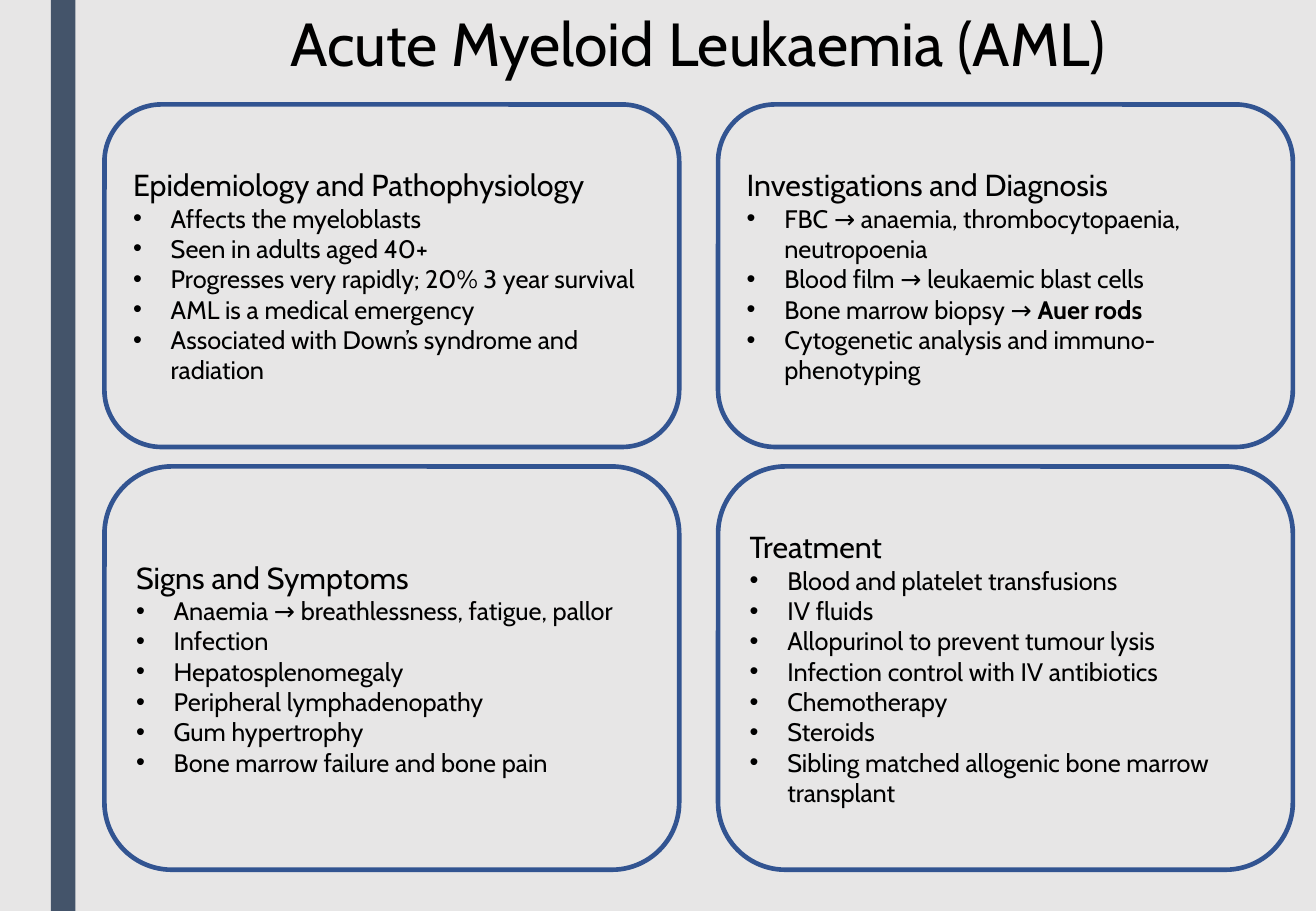
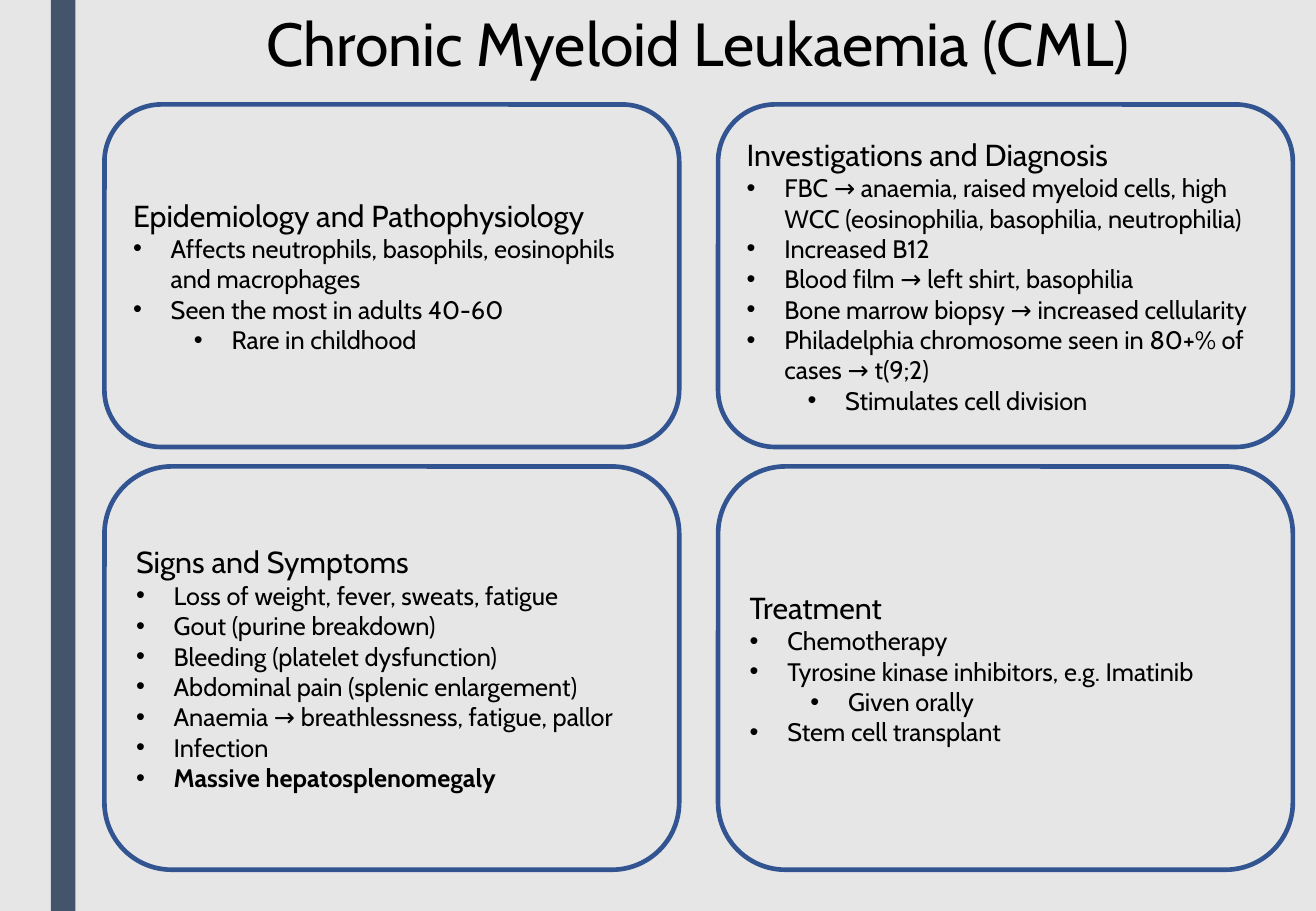
from dataclasses import dataclass

from lxml.etree import SubElement
from pptx import Presentation
from pptx.dml.color import RGBColor
from pptx.enum.shapes import MSO_SHAPE
from pptx.enum.text import MSO_ANCHOR, MSO_AUTO_SIZE, PP_ALIGN
from pptx.oxml.ns import qn
from pptx.slide import Slide
from pptx.text.text import TextFrame, _Paragraph
from pptx.util import Inches, Pt

COLORS = {"background": "E7E6E6", "band": "44546A", "outline": "325491", "text": "000000"}
FORMATS = {
    "title": {"name": "Cabin", "size": Pt(36)},
    "heading": {"name": "Cabin", "size": Pt(18)},
    "body": {"name": "Cabin", "size": Pt(15)},
}
SLIDE_WIDTH, SLIDE_HEIGHT = Inches(10.83), Inches(7.5)
PANEL_WIDTH = Inches(4.73)
COLUMN_LEFTS = (Inches(0.86), Inches(5.91))
ROW_HEIGHTS = (Inches(2.82), Inches(3.32))
ROW_GAP = Inches(0.16)
ROW_TOPS = (Inches(0.86), Inches(0.86) + ROW_HEIGHTS[0] + ROW_GAP)
BULLET_HANG, LEVEL_STEP = Inches(0.31), Inches(0.5)


@dataclass(frozen=True)
class Point:
    """A bullet; text between ** marks is bold."""
    text: str
    level: int = 0


@dataclass(frozen=True)
class Section:
    heading: str
    row: int
    column: int


@dataclass(frozen=True)
class Disease:
    """A slide title and the points of each section, in SECTIONS order."""
    title: str
    points: tuple[tuple[Point, ...], ...]


SECTIONS = (
    Section("Epidemiology and Pathophysiology", 0, 0),
    Section("Treatment", 1, 1),
    Section("Signs and Symptoms", 1, 0),
    Section("Investigations and Diagnosis", 0, 1),
)

DISEASES = (
    Disease("Acute Myeloid Leukaemia (AML)", (
        (
            Point("Affects the myeloblasts"),
            Point("Seen in adults aged 40+"),
            Point("Progresses very rapidly; 20% 3 year survival"),
            Point("AML is a medical emergency"),
            Point("Associated with Down’s syndrome and radiation"),
        ),
        (
            Point("Blood and platelet transfusions"),
            Point("IV fluids"),
            Point("Allopurinol to prevent tumour lysis"),
            Point("Infection control with IV antibiotics"),
            Point("Chemotherapy"),
            Point("Steroids"),
            Point("Sibling matched allogenic bone marrow transplant"),
        ),
        (
            Point("Anaemia → breathlessness, fatigue, pallor"),
            Point("Infection"),
            Point("Hepatosplenomegaly"),
            Point("Peripheral lymphadenopathy"),
            Point("Gum hypertrophy"),
            Point("Bone marrow failure and bone pain"),
        ),
        (
            Point("FBC → anaemia, thrombocytopaenia, neutropoenia"),
            Point("Blood film → leukaemic blast cells"),
            Point("Bone marrow biopsy → **Auer rods**"),
            Point("Cytogenetic analysis and immuno-phenotyping"),
        ),
    )),
    Disease("Chronic Myeloid Leukaemia (CML)", (
        (
            Point("Affects neutrophils, basophils, eosinophils and macrophages"),
            Point("Seen the most in adults 40-60"),
            Point("Rare in childhood", level=1),
        ),
        (
            Point("Chemotherapy"),
            Point("Tyrosine kinase inhibitors, e.g. Imatinib"),
            Point("Given orally", level=1),
            Point("Stem cell transplant"),
        ),
        (
            Point("Loss of weight, fever, sweats, fatigue"),
            Point("Gout (purine breakdown)"),
            Point("Bleeding (platelet dysfunction)"),
            Point("Abdominal pain (splenic enlargement)"),
            Point("Anaemia → breathlessness, fatigue, pallor"),
            Point("Infection"),
            Point("**Massive hepatosplenomegaly**"),
        ),
        (
            Point("FBC → anaemia, raised myeloid cells, high WCC "
                  "(eosinophilia, basophilia, neutrophilia)"),
            Point("Increased B12"),
            Point("Blood film → left shirt, basophilia"),
            Point("Bone marrow biopsy → increased cellularity"),
            Point("Philadelphia chromosome seen in 80+% of cases → t(9;2)"),
            Point("Stimulates cell division", level=1),
        ),
    )),
)


def color(role: str) -> RGBColor:
    return RGBColor.from_string(COLORS[role])


def write(paragraph: _Paragraph, text: str, style: str, alignment: PP_ALIGN) -> None:
    """Add text in a named format, with every second part between ** marks bold."""
    paragraph.alignment = alignment
    for index, part in enumerate(text.split("**")):
        if not part:
            continue
        run = paragraph.add_run()
        run.text = part
        run.font.color.rgb = color("text")
        for attribute, value in {**FORMATS[style], "bold": index % 2 == 1}.items():
            setattr(run.font, attribute, value)


def add_bullet(frame: TextFrame, point: Point) -> None:
    paragraph = frame.add_paragraph()
    paragraph.level = point.level
    write(paragraph, point.text, "body", PP_ALIGN.LEFT)
    properties = paragraph._p.get_or_add_pPr()
    properties.set("marL", str(BULLET_HANG + point.level * LEVEL_STEP))
    properties.set("indent", str(-BULLET_HANG))
    SubElement(properties, qn("a:buFont"), typeface="Arial")
    SubElement(properties, qn("a:buChar"), char="•")


def add_band(slide: Slide) -> None:
    band = slide.shapes.add_shape(
        MSO_SHAPE.RECTANGLE, Inches(0.42), 0, Inches(0.2), SLIDE_HEIGHT)
    band.shadow.inherit = False
    band.fill.solid()
    band.fill.fore_color.rgb = color("band")
    band.line.fill.background()


def add_title(slide: Slide, title: str) -> None:
    frame = slide.shapes.add_textbox(
        Inches(0.66), 0, Inches(10.17), Inches(0.71)).text_frame
    frame.word_wrap = True
    frame.auto_size = MSO_AUTO_SIZE.SHAPE_TO_FIT_TEXT
    write(frame.paragraphs[0], title, "title", PP_ALIGN.CENTER)


def add_panel(slide: Slide, section: Section, points: tuple[Point, ...]) -> None:
    panel = slide.shapes.add_shape(
        MSO_SHAPE.ROUNDED_RECTANGLE, COLUMN_LEFTS[section.column],
        ROW_TOPS[section.row], PANEL_WIDTH, ROW_HEIGHTS[section.row])
    panel.shadow.inherit = False
    panel.fill.background()
    panel.line.color.rgb = color("outline")
    panel.line.width = Pt(2.75)
    frame = panel.text_frame
    frame.word_wrap = True
    frame.vertical_anchor = MSO_ANCHOR.MIDDLE
    write(frame.paragraphs[0], section.heading, "heading", PP_ALIGN.LEFT)
    for point in points:
        add_bullet(frame, point)


def main() -> None:
    deck = Presentation()
    deck.slide_width, deck.slide_height = SLIDE_WIDTH, SLIDE_HEIGHT
    backdrop = deck.slide_master.background.fill
    backdrop.solid()
    backdrop.fore_color.rgb = color("background")
    blank = deck.slide_layouts[6]
    for disease in DISEASES:
        slide = deck.slides.add_slide(blank)
        add_band(slide)
        add_title(slide, disease.title)
        for section, points in zip(SECTIONS, disease.points):
            add_panel(slide, section, points)
    deck.save("out.pptx")


if __name__ == "__main__":
    main()
